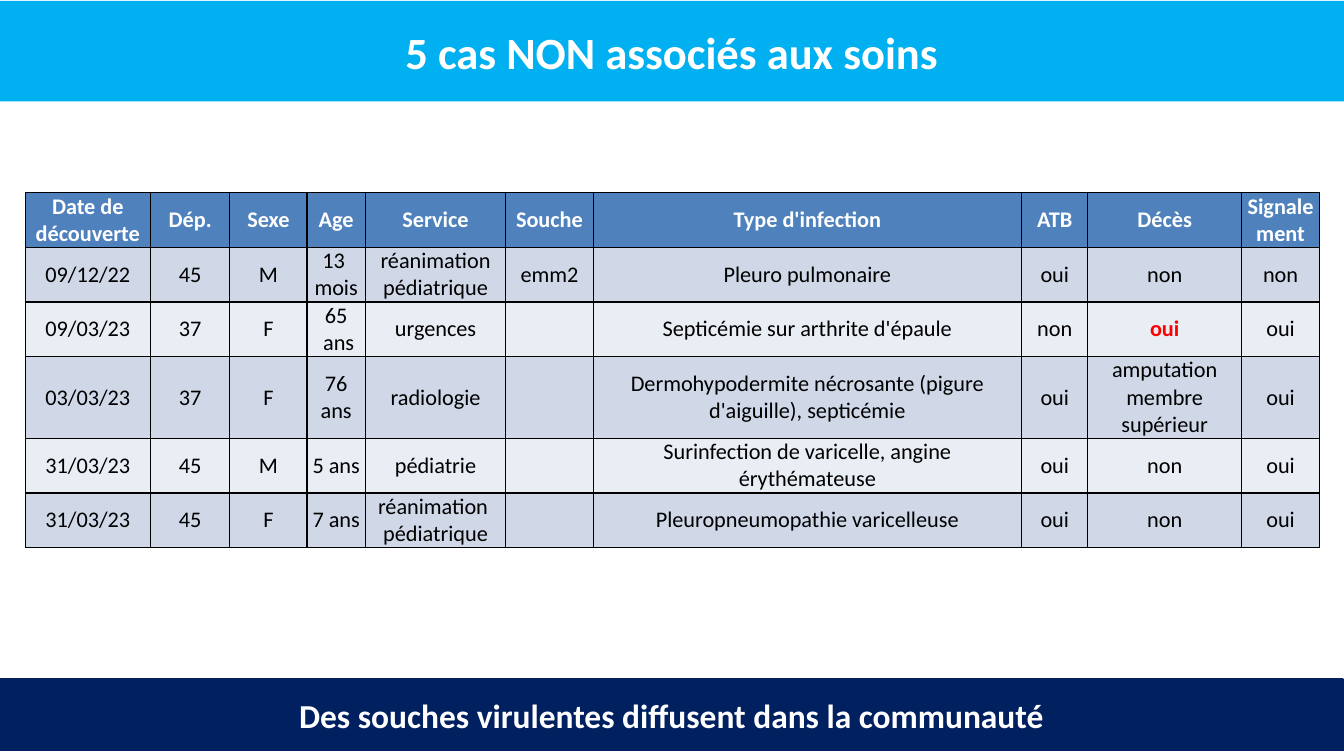
from lxml import etree
from pptx import Presentation
from pptx.dml.color import RGBColor
from pptx.enum.shapes import MSO_SHAPE
from pptx.enum.text import MSO_ANCHOR, PP_ALIGN
from pptx.oxml.ns import qn
from pptx.util import Inches, Pt

RECTANGLE = MSO_SHAPE.RECTANGLE
MIDDLE = MSO_ANCHOR.MIDDLE
CENTER = PP_ALIGN.CENTER

FONT = "Calibri"
WHITE, BLACK, RED = "FFFFFF", "000000", "FF0000"
HEADER_FILL = "4F81BD"
BAND_FILLS = ["D0D8E8", "E9EDF4"]

BANNERS = [
    ("5 cas NON associés aux soins", (0, 0.01, 13.39, 1), "00B0F0", None, 32),
    ("Des souches virulentes diffusent dans la communauté",
     (0, 6.77, 13.38, 0.71), "002060", "002060", 24),
]
HEADERS = ["Date de découverte", "Dép.", "Sexe", "Age", "Service", "Souche",
           "Type d'infection", "ATB", "Décès", "Signalement"]
CASES = [
    ["09/12/22", "45", "M", "13 \nmois", "réanimation pédiatrique", "emm2",
     "Pleuro pulmonaire", "oui", "non", "non"],
    ["09/03/23", "37", "F", "65\n ans", "urgences", "",
     "Septicémie sur arthrite d'épaule", "non", "oui", "oui"],
    ["03/03/23", "37", "F", "76\nans", "radiologie", "",
     "Dermohypodermite nécrosante (pigure d'aiguille), septicémie",
     "oui", "amputation membre supérieur", "oui"],
    ["31/03/23", "45", "M", "5 ans", "pédiatrie", "",
     "Surinfection de varicelle, angine érythémateuse", "oui", "non", "oui"],
    ["31/03/23", "45", "F", "7 ans", "réanimation \npédiatrique", "",
     "Pleuropneumopathie varicelleuse", "oui", "non", "oui"],
]
COLUMN_WIDTHS = [1.25, 0.79, 0.77, 0.58, 1.4, 0.87, 4.27, 0.66, 1.53, 0.78]
ROW_HEIGHTS = [0.54, 0.54, 0.54, 0.81, 0.54, 0.54]
TABLE_LEFT, TABLE_TOP = 0.25, 1.92
DEATH_COLUMN = HEADERS.index("Décès")


def rgb(value):
    """Turn a hex string into a colour."""
    return RGBColor.from_string(value)


def style_text(frame, size, color, bold):
    """Centre every paragraph of a frame and set its font."""
    for paragraph in frame.paragraphs:
        paragraph.alignment = CENTER
        paragraph.font.name = FONT
        paragraph.font.size = Pt(size)
        paragraph.font.bold = bold
        paragraph.font.color.rgb = rgb(color)


def add_banner(slide, text, box, fill, line, size):
    """Add a full-width coloured band with centred bold text."""
    banner = slide.shapes.add_shape(RECTANGLE, *map(Inches, box))
    banner.shadow.inherit = False
    banner.fill.solid()
    banner.fill.fore_color.rgb = rgb(fill)
    if line:
        banner.line.color.rgb = rgb(line)
        banner.line.width = Pt(2)
    else:
        banner.line.fill.background()
    banner.text_frame.word_wrap = True
    banner.text_frame.text = text
    banner.text_frame.vertical_anchor = MIDDLE
    style_text(banner.text_frame, size, WHITE, True)


def add_borders(cell):
    """Draw a thin black line on all four sides of a cell."""
    properties = cell._tc.get_or_add_tcPr()
    for side in ("a:lnL", "a:lnR", "a:lnT", "a:lnB"):
        border = etree.SubElement(properties, qn(side), w=str(Pt(1)))
        solid = etree.SubElement(border, qn("a:solidFill"))
        etree.SubElement(solid, qn("a:srgbClr"), val=BLACK)


def fill_cell(cell, text, fill, color, bold):
    """Write and format one table cell."""
    add_borders(cell)
    cell.fill.solid()
    cell.fill.fore_color.rgb = rgb(fill)
    cell.margin_left = cell.margin_right = 0
    cell.margin_top = cell.margin_bottom = 0
    cell.vertical_anchor = MIDDLE
    cell.text = text
    style_text(cell.text_frame, 16, color, bold)


def add_case_table(slide):
    """Add the table of cases, one row per case under the headers."""
    rows = [HEADERS] + CASES
    table = slide.shapes.add_table(
        len(rows), len(HEADERS), Inches(TABLE_LEFT), Inches(TABLE_TOP),
        Inches(sum(COLUMN_WIDTHS)), Inches(sum(ROW_HEIGHTS))).table
    for column, width in zip(table.columns, COLUMN_WIDTHS):
        column.width = Inches(width)
    for r, (values, height) in enumerate(zip(rows, ROW_HEIGHTS)):
        table.rows[r].height = Inches(height)
        for c, text in enumerate(values):
            if r == 0:
                look = HEADER_FILL, WHITE, True
            else:
                died = c == DEATH_COLUMN and text == "oui"
                look = BAND_FILLS[(r - 1) % 2], RED if died else BLACK, died
            fill_cell(table.cell(r, c), text, *look)


def main():
    """Build the slide and save it."""
    deck = Presentation()
    deck.slide_width, deck.slide_height = Inches(13.39), Inches(7.48)
    slide = deck.slides.add_slide(deck.slide_layouts[6])
    title, conclusion = BANNERS
    add_banner(slide, *title)
    add_case_table(slide)
    add_banner(slide, *conclusion)
    deck.save("out.pptx")


if __name__ == "__main__":
    main()
